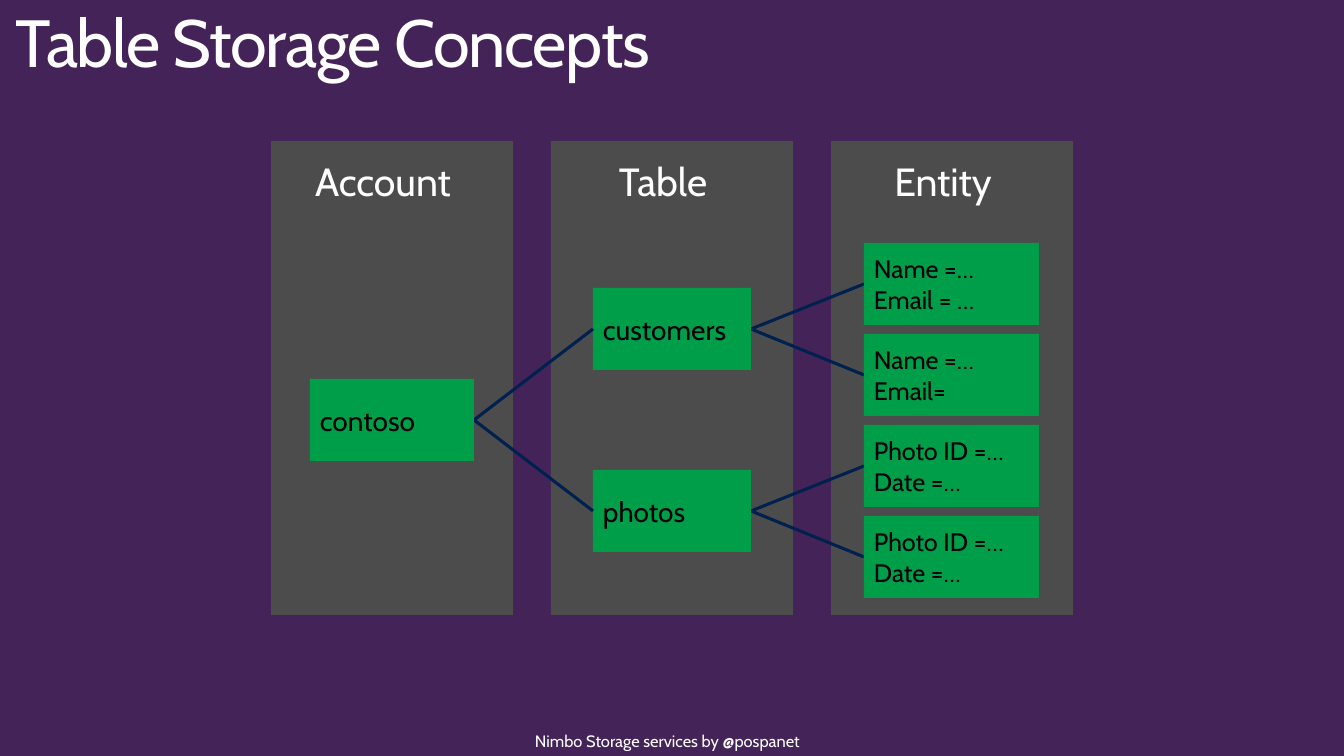
"""Build the slide on table storage concepts: account, tables and entities."""
import pptx
import pptx.dml.color
import pptx.enum.shapes
import pptx.enum.text
import pptx.oxml.ns
import pptx.util

PX = 9255
ALIGN = pptx.enum.text.PP_ALIGN
ANCHOR = pptx.enum.text.MSO_ANCHOR


class Theme:
    """Colours, font and type sizes of the slide."""
    font = "Cabin"
    background, panel, box, line = "442359", "4C4C4C", "009E49", "002050"
    light, dark = "FFFFFF", "000000"
    title, heading, node, entity, footer = 48.6, 28.6, 20.4, 18.4, 12
    line_width = 2.25


COLUMN_LEFT, COLUMN_TOP, COLUMN_STEP = 271, 141, 280
COLUMN_WIDTH, COLUMN_HEIGHT, HEADING_HEIGHT = 242, 474, 159
BOX_HEIGHT = 82
ENTITY_TOP, ENTITY_STEP = 243, 91
ACCOUNT_X, ACCOUNT_WIDTH = 310, 164
TABLE_X, TABLE_WIDTH = 593, 158
ENTITY_X, ENTITY_WIDTH = 864, 175

COLUMNS = ["Account", "Table", "Entity"]
ACCOUNT = "contoso"
TABLES = {
    "customers": [["Name =…", "Email = …"], ["Name =…", "Email="]],
    "photos": [["Photo ID =…", "Date =…"], ["Photo ID =…", "Date =…"]],
}


def px(*values):
    """Turn pixel lengths into EMU."""
    return [pptx.util.Emu(v * PX) for v in values]


def rgb(value):
    """Turn a hex string into a colour."""
    return pptx.dml.color.RGBColor.from_string(value)


def set_values(target, values):
    """Set each named attribute of the target."""
    for name, value in values.items():
        setattr(target, name, value)


def write(sp, lines, size, color, insets=(10, 5, 10, 5), anchor=ANCHOR.TOP,
          align=ALIGN.LEFT, spacing=1.0, tracking=None):
    """Write one paragraph per line into a shape."""
    tf = sp.text_frame
    sides = ("margin_left", "margin_top", "margin_right", "margin_bottom")
    set_values(tf, {"word_wrap": True, "vertical_anchor": anchor,
                    **dict(zip(sides, px(*insets)))})
    for i, line in enumerate(lines):
        p = tf.add_paragraph() if i else tf.paragraphs[0]
        set_values(p, {"alignment": align, "line_spacing": spacing})
        r = p.add_run()
        r.text = line
        set_values(r.font, {"name": Theme.font, "size": pptx.util.Pt(size)})
        r.font.color.rgb = rgb(color)
        if tracking is not None:
            r.font._element.set("spc", str(tracking))


def add_text(s, bounds, text, size, **layout):
    """Add a text box with light text."""
    sp = s.shapes.add_textbox(*px(*bounds))
    write(sp, [text], size, Theme.light, **layout)


def add_rect(s, bounds, color):
    """Add a plain filled rectangle."""
    sp = s.shapes.add_shape(pptx.enum.shapes.MSO_SHAPE.RECTANGLE, *px(*bounds))
    sp.shadow.inherit = False
    sp.fill.solid()
    sp.fill.fore_color.rgb = rgb(color)
    sp.line.fill.background()
    return sp


def add_column(s, index, heading):
    """Add a panel with its heading."""
    left = COLUMN_LEFT + index * COLUMN_STEP
    add_rect(s, (left, COLUMN_TOP, COLUMN_WIDTH, COLUMN_HEIGHT), Theme.panel)
    add_text(s, (left, COLUMN_TOP, COLUMN_WIDTH, HEADING_HEIGHT), heading,
             Theme.heading, insets=(10, 28, 28, 28), align=ALIGN.CENTER,
             spacing=0.9)


def add_box(s, x, y, width, lines, size):
    """Add a labelled box of the tree."""
    sp = add_rect(s, (x, y, width, BOX_HEIGHT), Theme.box)
    write(sp, lines, size, Theme.dark, anchor=ANCHOR.MIDDLE)


def add_link(s, x1, y1, x2, y2):
    """Link two boxes, given their facing edges and tops."""
    half = BOX_HEIGHT // 2
    sp = s.shapes.add_connector(pptx.enum.shapes.MSO_CONNECTOR.STRAIGHT,
                                *px(x1, y1 + half, x2, y2 + half))
    sp.line.color.rgb = rgb(Theme.line)
    sp.line.width = pptx.util.Pt(Theme.line_width)
    sp._element.spPr.append(pptx.oxml.parse_xml(
        "<a:effectLst %s/>" % pptx.oxml.ns.nsdecls("a")))


def add_tree(s):
    """Add the account, its tables and their entities, each parent centred."""
    table_tops, y = [], ENTITY_TOP
    for name, entities in TABLES.items():
        tops = [y + i * ENTITY_STEP for i in range(len(entities))]
        table_top = (tops[0] + tops[-1]) // 2
        for top, lines in zip(tops, entities):
            add_link(s, TABLE_X + TABLE_WIDTH, table_top, ENTITY_X, top)
            add_box(s, ENTITY_X, top, ENTITY_WIDTH, lines, Theme.entity)
        add_box(s, TABLE_X, table_top, TABLE_WIDTH, [name], Theme.node)
        table_tops.append(table_top)
        y = tops[-1] + ENTITY_STEP
    account_top = (table_tops[0] + table_tops[-1]) // 2
    for top in table_tops:
        add_link(s, ACCOUNT_X + ACCOUNT_WIDTH, account_top, TABLE_X, top)
    add_box(s, ACCOUNT_X, account_top, ACCOUNT_WIDTH, [ACCOUNT], Theme.node)


def main():
    """Build and save the slide."""
    prs = pptx.Presentation()
    set_values(prs, dict(zip(("slide_width", "slide_height"), px(1344, 756))))
    s = prs.slides.add_slide(prs.slide_layouts[6])
    s.background.fill.solid()
    s.background.fill.fore_color.rgb = rgb(Theme.background)
    add_text(s, (525, 726, 295, 30), "Nimbo Storage services by @pospanet",
             Theme.footer)
    add_text(s, (0, 0, 1344, 90), "Table Storage Concepts", Theme.title,
             insets=(16, 10, 16, 10), spacing=0.9, tracking=-100)
    for index, heading in enumerate(COLUMNS):
        add_column(s, index, heading)
    add_tree(s)
    prs.save("out.pptx")


if __name__ == "__main__":
    main()
